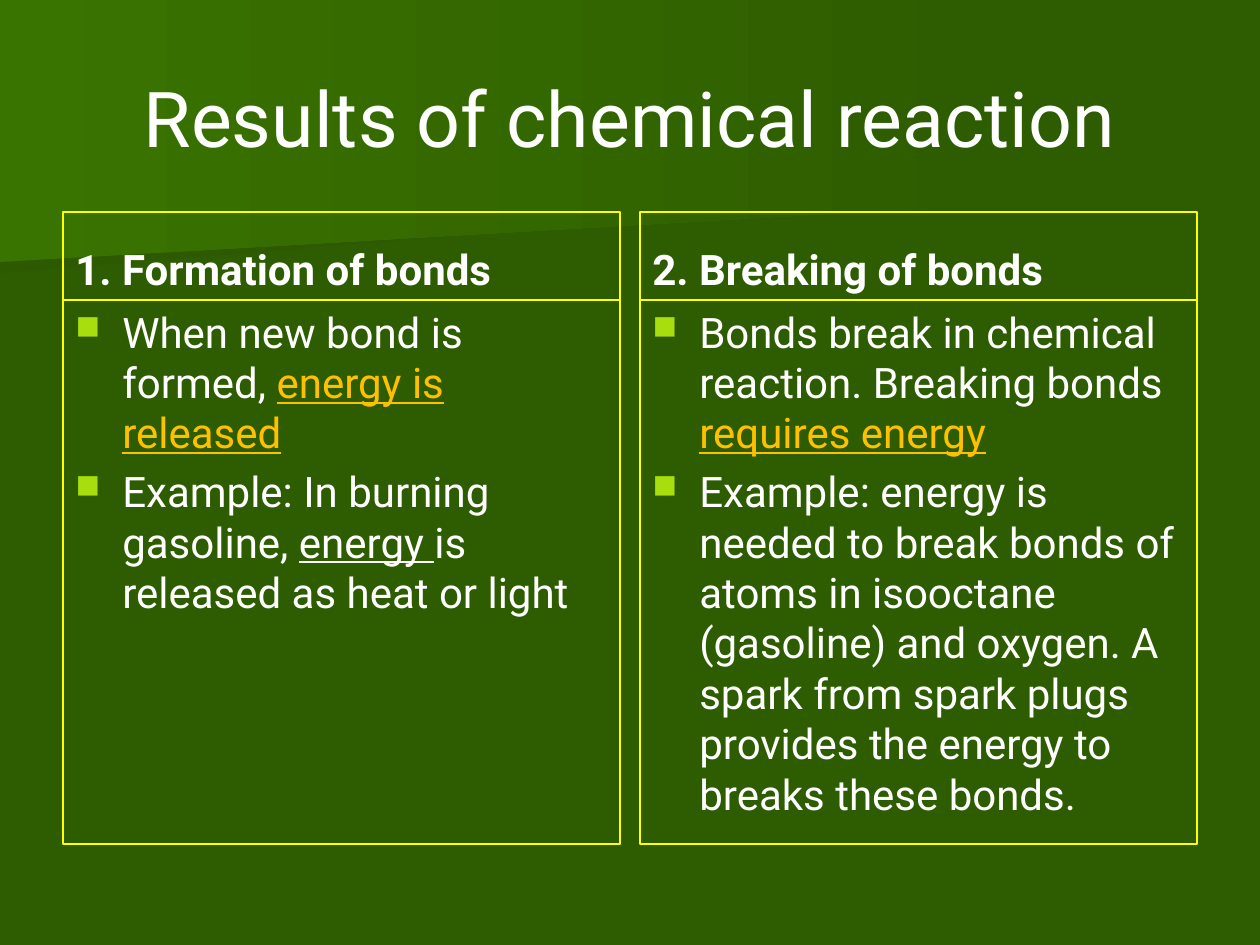
from lxml import etree
from pptx import Presentation
from pptx.dml.color import RGBColor
from pptx.enum.shapes import MSO_SHAPE
from pptx.enum.text import MSO_ANCHOR, PP_ALIGN
from pptx.oxml.ns import qn
from pptx.util import Pt

PX = 914400 / 126
RECT = MSO_SHAPE.RECTANGLE
TOP, MIDDLE, BOTTOM = MSO_ANCHOR.TOP, MSO_ANCHOR.MIDDLE, MSO_ANCHOR.BOTTOM
LEFT, CENTER = PP_ALIGN.LEFT, PP_ALIGN.CENTER

COLORS = {
    "back": "2E5C00", "shade": "2D5A00", "glow": "3A7400", "text": "FFFFFF",
    "frame": "FFFF00", "mark": "A8DE0E", "key": "FFC000",
}
PLAIN = {"name": "Roboto", "size": Pt(24), "color": "text"}
TITLE = {**PLAIN, "size": Pt(44)}
HEAD = {**PLAIN, "bold": True}
KEY = {**PLAIN, "color": "key", "underline": True}
UNDER = {**PLAIN, "underline": True}

BANDS = [
    ([(981, 193), (0, 273), (0, 127), (982, 127), (981, 161)], "shade"),
    ([(998, 204), (0, 262), (0, 0), (998, 0)], "glow"),
]
PANELS = [
    ("1. Formation of bonds", [
        [("When new bond is formed, ", PLAIN), ("energy is released", KEY)],
        [("Example: In burning gasoline, ", PLAIN), ("energy ", UNDER),
         ("is released as heat or light", PLAIN)],
    ]),
    ("2. Breaking of bonds", [
        [("Bonds break in chemical reaction. Breaking bonds ", PLAIN),
         ("requires energy", KEY)],
        [("Example: energy is needed to break bonds of atoms in isooctane "
          "(gasoline) and oxygen. A spark from spark plugs provides the "
          "energy to breaks these bonds.", PLAIN)],
    ]),
]


def px(num):
    """Turn pixels into EMU."""
    return round(num * PX)


def tint(name):
    """Look up a colour by name."""
    return RGBColor.from_string(COLORS[name])


def style(item, form):
    """Set each format value on an item."""
    for key, value in form.items():
        if key == "color":
            item.color.rgb = tint(value)
        else:
            setattr(item, key, value)


def bullet(para):
    """Give a paragraph a hanging square bullet."""
    props = para._p.get_or_add_pPr()
    props.set("marL", str(px(47)))
    props.set("indent", str(px(-47)))
    color = etree.SubElement(props, qn("a:buClr"))
    etree.SubElement(color, qn("a:srgbClr"), val=COLORS["mark"])
    etree.SubElement(props, qn("a:buSzPct"), val="80000")
    etree.SubElement(props, qn("a:buChar"), char="■")


def write(shape, paras, anchor, form, marked=False):
    """Fill a shape with paragraphs of styled runs."""
    frame = shape.text_frame
    style(frame, {"word_wrap": True, "vertical_anchor": anchor})
    for num, runs in enumerate(paras):
        para = frame.add_paragraph() if num else frame.paragraphs[0]
        style(para, form)
        if marked:
            bullet(para)
        for text, face in runs:
            run = para.add_run()
            run.text = text
            style(run.font, face)


def band(slide, points, color):
    """Draw one background band that fades to the right."""
    build = slide.shapes.build_freeform(*points[0], scale=PX)
    build.add_line_segments(points[1:], close=True)
    shape = build.convert_to_shape()
    shape.shadow.inherit = False
    shape.line.fill.background()
    shape.fill.gradient()
    shape.fill.gradient_angle = 0
    for stop, name in zip(shape.fill.gradient_stops, (color, "back")):
        stop.color.rgb = tint(name)


def title(slide, box, text):
    """Place the slide title."""
    shape = slide.shapes.add_textbox(*map(px, box))
    write(shape, [[(text, TITLE)]], MIDDLE, {"alignment": CENTER})


def cell(slide, box):
    """Draw one outlined box."""
    shape = slide.shapes.add_shape(RECT, *map(px, box))
    shape.shadow.inherit = False
    shape.fill.background()
    style(shape.line, {"color": "frame", "width": Pt(0.75)})
    return shape


def panel(slide, box, head, points):
    """Place a heading cell above its list cell."""
    left, top, width, height = box
    split = 88
    form = {"alignment": LEFT, "space_before": Pt(4.8)}
    write(cell(slide, (left, top, width, split)), [[(head, HEAD)]], BOTTOM, form)
    body = cell(slide, (left, top + split, width, height - split))
    write(body, points, TOP, form, marked=True)


def main():
    """Build and save the slide."""
    deck = Presentation()
    style(deck, {"slide_width": px(1260), "slide_height": px(945)})
    slide = deck.slides.add_slide(deck.slide_layouts[6])
    fill = slide.background.fill
    fill.solid()
    fill.fore_color.rgb = tint("back")
    for points, color in BANDS:
        band(slide, points, color)
    title(slide, (63, 38, 1134, 157), "Results of chemical reaction")
    for num, (head, points) in enumerate(PANELS):
        panel(slide, (63 + num * 577, 212, 557, 632), head, points)
    deck.save("out.pptx")


if __name__ == "__main__":
    main()
